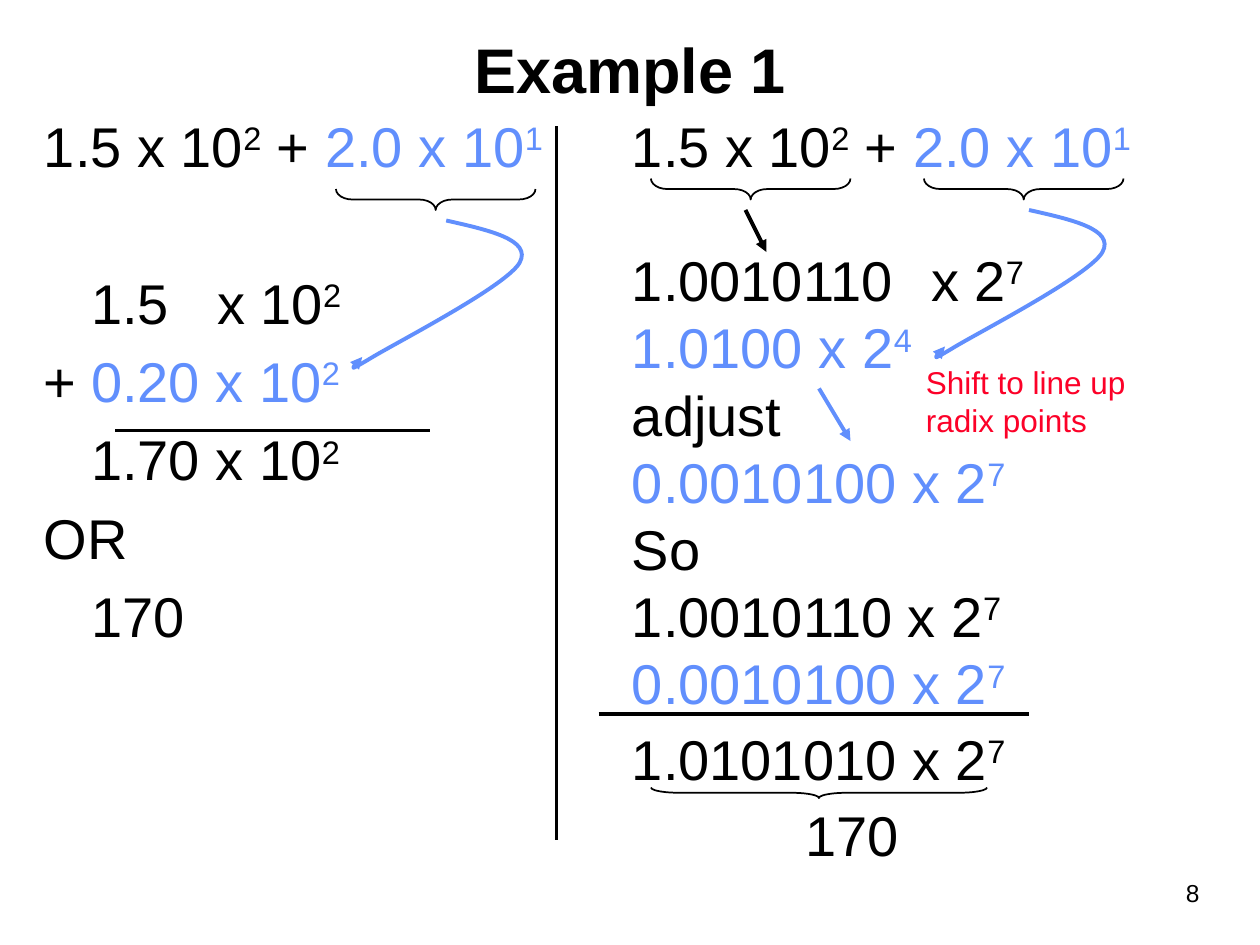
from typing import NamedTuple

from lxml.etree import SubElement
from pptx import Presentation
from pptx.dml.color import RGBColor
from pptx.enum.shapes import MSO_CONNECTOR, MSO_SHAPE
from pptx.enum.text import MSO_ANCHOR, PP_ALIGN
from pptx.oxml.ns import qn
from pptx.util import Pt

BLACK, BLUE, RED = "000000", "618FFD", "FC0128"
FONT = "Arial"
INDENT = 27


class Box(NamedTuple):
    left: float
    top: float
    width: float
    height: float


class Term(NamedTuple):
    text: str
    power: str = ""
    color: str = BLACK


class Row(NamedTuple):
    terms: list[Term]
    before: float = 0
    margin: float = INDENT
    hanging: float = INDENT
    tab: float = 0


class Stroke(NamedTuple):
    start: tuple[float, float]
    end: tuple[float, float]
    color: str = BLACK
    arrow: bool = False


SUM = [Term("1.5 x 10", "2"), Term(" + "), Term("2.0 x 10", "1", BLUE)]
GAP, RESULT_GAP, LINE = 6.4, 4.8, 38.4

DECIMAL_ROWS = [
    Row(SUM),
    Row([Term("1.5\tx 10", "2")], before=LINE + 2 * GAP, hanging=0, tab=97.6),
    Row([Term("+"), Term("\t0.20 x 10", "2", BLUE)], before=GAP),
    Row([Term("1.70 x 10", "2")], before=GAP, hanging=0),
    Row([Term("OR")], before=GAP),
    Row([Term("170")], before=GAP, hanging=0),
]
BINARY_ROWS = [
    Row(SUM),
    Row([Term("1.0010110\tx 2", "7")], before=LINE, tab=166),
    Row([Term("1.0100 x 2", "4", BLUE)]),
    Row([Term("adjust")]),
    Row([Term("0.0010100 x 2", "7", BLUE)]),
    Row([Term("So")]),
    Row([Term("1.0010110 x 2", "7")]),
    Row([Term("0.0010100 x 2", "7", BLUE)]),
    Row([Term("1.0101010 x 2", "7")], before=RESULT_GAP),
    Row([Term("170")], before=RESULT_GAP, margin=99, hanging=0),
]
STROKES = [
    Stroke((66, 246), (246, 246)),
    Stroke((318, 72), (318, 480)),
    Stroke((342, 408), (588, 408)),
    Stroke((468, 222), (486, 252), BLUE, True),
    Stroke((426, 120), (438, 144), BLACK, True),
]
# Each brace is given by the box it fills once it is turned.
BRACES = [
    (Box(372, 102, 114, 12), 0.79),
    (Box(528, 102, 114, 12), 0.79),
    (Box(192, 108, 114, 12), 0.79),
    (Box(372, 450, 192, 6), 2.67),
]
CURVE = [(24.5, 5.5), (49, 11), (42, 24), (35, 37), (-27, 69), (-42, 78),
         (-57, 87), (-52.5, 82.5), (-48, 78)]
CURVE_STARTS = [(255, 126), (588, 120)]


def rgb(color: str) -> RGBColor:
    return RGBColor.from_string(color)


def style_run(run, size: float, color: str, bold: bool = False) -> None:
    run.font.name = FONT
    run.font.size = Pt(size)
    run.font.bold = bold
    run.font.color.rgb = rgb(color)


def style_line(shape, color: str, width: float, arrow: bool = False) -> None:
    shape.line.color.rgb = rgb(color)
    shape.line.width = Pt(width)
    if arrow:
        SubElement(shape.line._get_or_add_ln(), qn("a:tailEnd"), type="triangle")


def add_box(page, box: Box):
    shape = page.shapes.add_textbox(*map(Pt, box))
    shape.text_frame.word_wrap = True
    return shape


def add_label(page, box: Box, text: str, size: float, color: str = BLACK,
              align=PP_ALIGN.CENTER, anchor=MSO_ANCHOR.MIDDLE, bold=False) -> None:
    frame = add_box(page, box).text_frame
    frame.text = text
    frame.vertical_anchor = anchor
    frame.paragraphs[0].alignment = align
    style_run(frame.paragraphs[0].runs[0], size, color, bold)


def add_term(para, term: Term) -> None:
    """Add a term and, if it has one, its raised power."""
    base = para.add_run()
    base.text = term.text
    style_run(base, 32, term.color)
    if term.power:
        power = para.add_run()
        power.text = term.power
        style_run(power, 32, term.color)
        power.font._element.set("baseline", "30000")


def add_working(page, box: Box, rows: list[Row]) -> None:
    """Write one column of the calculation, a paragraph to each row."""
    frame = add_box(page, box).text_frame
    for index, row in enumerate(rows):
        para = frame.add_paragraph() if index else frame.paragraphs[0]
        para.space_before = Pt(row.before)
        properties = para._p.get_or_add_pPr()
        properties.set("marL", str(Pt(row.margin)))
        properties.set("indent", str(Pt(-row.hanging)))
        if row.tab:
            tabs = SubElement(properties, qn("a:tabLst"))
            SubElement(tabs, qn("a:tab"), pos=str(Pt(row.tab)), algn="l")
        for term in row.terms:
            add_term(para, term)


def add_stroke(page, stroke: Stroke) -> None:
    line = page.shapes.add_connector(
        MSO_CONNECTOR.STRAIGHT, *map(Pt, stroke.start + stroke.end))
    style_line(line, stroke.color, 2.25, stroke.arrow)
    SubElement(line._element.spPr, qn("a:effectLst"))


def add_brace(page, box: Box, curl: float) -> None:
    """Turn a left brace so that it lies under the text and points down."""
    left = box.left + (box.width - box.height) / 2
    top = box.top + (box.height - box.width) / 2
    brace = page.shapes.add_shape(
        MSO_SHAPE.LEFT_BRACE, Pt(left), Pt(top), Pt(box.height), Pt(box.width))
    brace.rotation = 270
    brace.adjustments[0] = curl
    brace.shadow.inherit = False
    brace.fill.background()
    style_line(brace, BLACK, 1)


def add_curve(page, start: tuple[float, float]) -> None:
    """Draw the curved arrow; each three points of CURVE make one Bezier arc."""
    x, y = start
    builder = page.shapes.build_freeform(Pt(x), Pt(y))
    builder.add_line_segments([(Pt(x + dx), Pt(y + dy)) for dx, dy in CURVE], close=False)
    curve = builder.convert_to_shape()
    segments = list(curve._element.iter(qn("a:lnTo")))
    for first in range(0, len(segments), 3):
        arc = SubElement(segments[first].getparent(), qn("a:cubicBezTo"))
        for segment in segments[first:first + 3]:
            arc.append(segment[0])
            segment.getparent().remove(segment)
    curve.shadow.inherit = False
    curve.fill.background()
    style_line(curve, BLUE, 2.25, arrow=True)


def main() -> None:
    deck = Presentation()
    deck.slide_width, deck.slide_height = Pt(720), Pt(540)
    page = deck.slides.add_slide(deck.slide_layouts[6])
    add_label(page, Box(666, 498, 31, 24), "8", 14)
    add_label(page, Box(54, 18, 612, 42), "Example 1", 36, bold=True)
    add_working(page, Box(18, 60, 312, 450), DECIMAL_ROWS)
    add_working(page, Box(354, 60, 312, 450), BINARY_ROWS)
    add_label(page, Box(522, 204, 138, 50), "Shift to line up radix points", 18, RED,
              PP_ALIGN.LEFT, MSO_ANCHOR.TOP)
    for stroke in STROKES:
        add_stroke(page, stroke)
    for box, curl in BRACES:
        add_brace(page, box, curl)
    for start in CURVE_STARTS:
        add_curve(page, start)
    deck.save("out.pptx")


if __name__ == "__main__":
    main()
